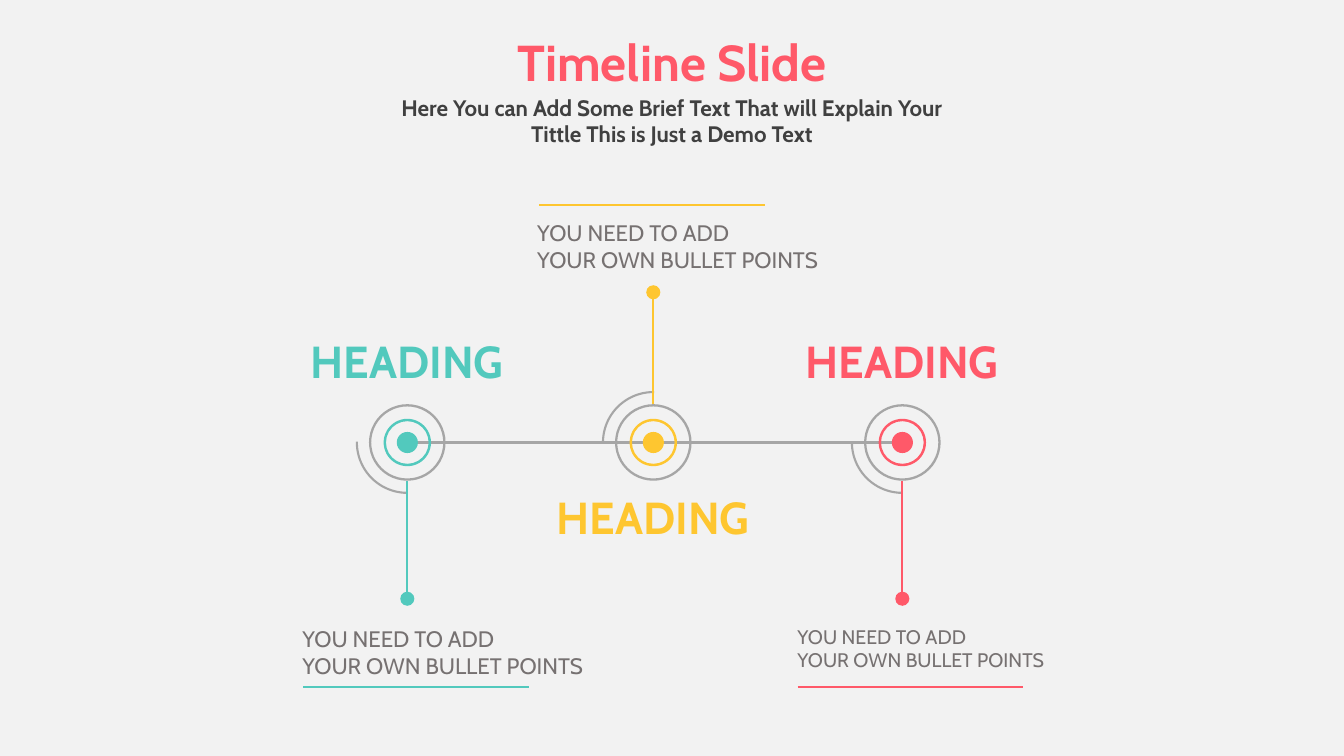
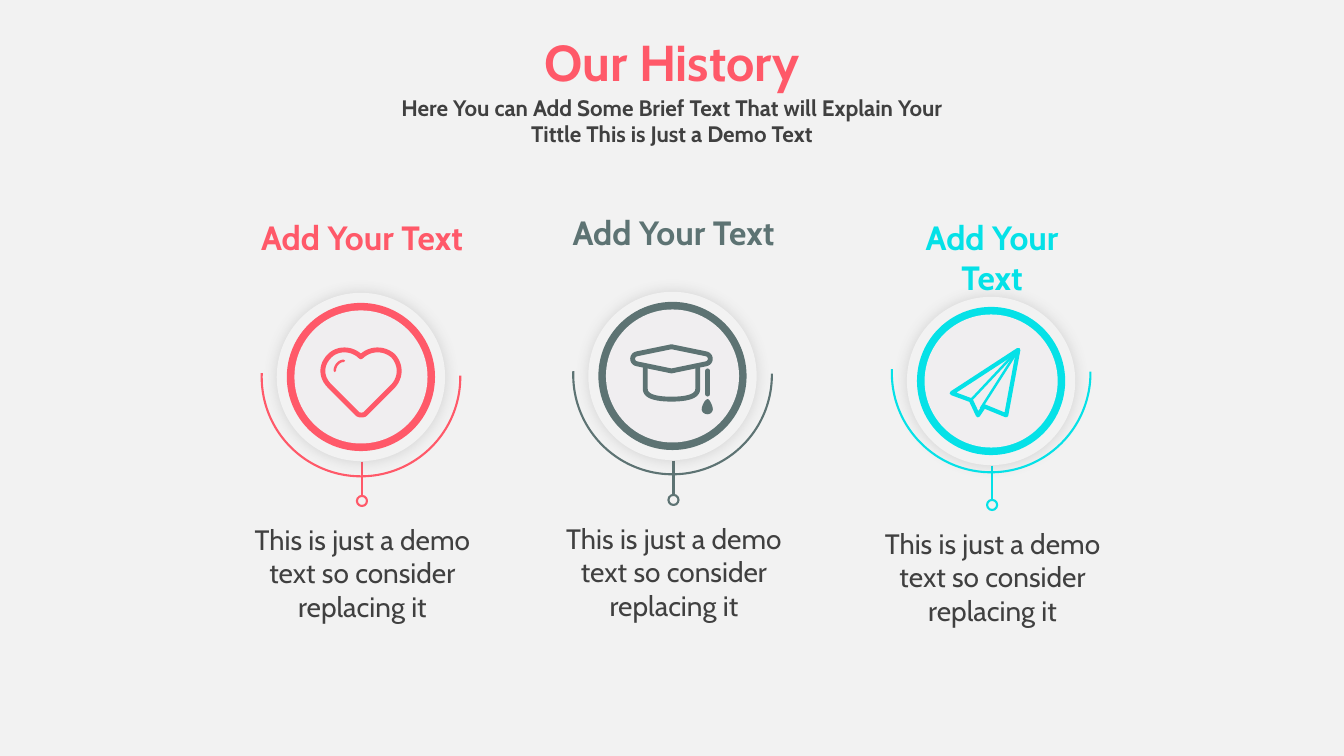
from lxml import etree
from pptx import Presentation, util as u
from pptx.dml.color import RGBColor
from pptx.enum import shapes as es, text as et
from pptx.oxml.ns import qn

PX = 9144  # 100 px to the inch
FONT = "Cabin"
TEAL, GOLD, RED = "52C9BD", "FEC630", "FF5969"
SLATE, CYAN = "5D7373", "05E1E7"
PAPER, PALE, GREY, MUTED, DARK = "F2F2F2", "F0EEF0", "A6A6A6", "767171", "404040"
KIND = es.MSO_SHAPE
LEFT, MID = et.PP_ALIGN.LEFT, et.PP_ALIGN.CENTER

# Content
BRIEF = "Here You can Add Some Brief Text That will Explain Your Tittle This is Just a Demo Text"
NOTE = "YOU NEED TO ADD\nYOUR OWN BULLET POINTS"
DEMO = "This is just a demo text so consider replacing it"

AXIS = 439
STOPS = [
    dict(x=404, color=TEAL, up=False, head=326, note=(290, 615), size=16, rule=(301, 682)),
    dict(x=648, color=GOLD, up=True, head=481, note=(523, 213), size=16, rule=(535, 203)),
    dict(x=895, color=RED, up=False, head=326, note=(781, 615), size=14, rule=(791, 682)),
]

# Icon strokes: (width in pt, closed, start, steps); a step is a line end or a curve
HEART = [
    (3.5, True, (358, 354), [
        (367, 345, 381, 345, 390, 353), (398, 362, 398, 374, 390, 383), (362, 411),
        (360, 412, 357, 412, 355, 411), (327, 383), (318, 374, 318, 362, 327, 353),
        (335, 345, 349, 345, 358, 354)]),
    (1.75, False, (332, 368), [(332, 363, 336, 358, 341, 358)]),
]
CAP = [
    (3.5, True, (666, 344), [
        (700, 351), (706, 352, 706, 360, 700, 361), (666, 368), (632, 361),
        (626, 360, 626, 352, 632, 351)]),
    (3.5, False, (640, 365), [
        (640, 386), (640, 393, 650, 396, 666, 396), (682, 396, 692, 393, 692, 386), (692, 365)]),
    (3.5, False, (702, 368), [(702, 391)]),
    (0, True, (702, 396), [
        (699, 396, 696, 403, 696, 406), (696, 409, 699, 411, 702, 411),
        (704, 411, 707, 409, 707, 406), (707, 403, 704, 396, 702, 396)]),
]
PLANE = [
    (3, True, (1010, 347), [(944, 390), (963, 397), (970, 412), (976, 403), (998, 412)]),
    (1.75, False, (1010, 347), [(963, 397)]),
    (1.75, False, (1010, 347), [(973, 405)]),
]
ITEMS = [
    dict(x=358, y=374, arc=374, color=RED, label=210, wide=257, icon=HEART),
    dict(x=667, y=373, arc=372, color=SLATE, label=205, wide=233, icon=CAP),
    dict(x=983, y=378, arc=370, color=CYAN, label=210, wide=217, icon=PLANE),
]


# Shared helpers
def px(*vals):
    return [round(v * PX) for v in vals]


def rgb(code):
    return RGBColor.from_string(code)


def stroke(line, color, width=1.5):
    line.color.rgb = rgb(color)
    line.width = u.Pt(width)


def write(shape, words, size, color, bold=False, align=MID):
    frame = shape.text_frame
    frame.text = words
    frame.word_wrap = True
    frame.auto_size = et.MSO_AUTO_SIZE.NONE
    frame.vertical_anchor = et.MSO_ANCHOR.TOP
    for para in frame.paragraphs:
        para.alignment = align
        para.space_before = u.Pt(0)
        for run in para.runs:
            font = run.font
            font.name, font.size, font.bold = FONT, u.Pt(size), bold
            font.color.rgb = rgb(color)


def label(slide, box, *style, **more):
    write(slide.shapes.add_textbox(*px(*box)), *style, **more)


def rule(slide, x1, y1, x2, y2, color):
    line = slide.shapes.add_connector(es.MSO_CONNECTOR.STRAIGHT, *px(x1, y1, x2, y2))
    stroke(line.line, color)
    etree.SubElement(line._element.spPr, qn("a:effectLst"))


def round_at(slide, kind, x, y, size, fill=None, line=None, adj=(), turn=0):
    """Add a round shape by its centre and size."""
    shape = slide.shapes.add_shape(kind, *px(x - size / 2, y - size / 2, size, size))
    shape.shadow.inherit = False
    shape.rotation = turn
    for i, val in enumerate(adj):
        shape.adjustments[i] = val
    if fill:
        shape.fill.solid()
        shape.fill.fore_color.rgb = rgb(fill)
    else:
        shape.fill.background()
    if line:
        stroke(shape.line, line)
    else:
        shape.line.fill.background()
    return shape


def glow(shape):
    """Add a soft grey halo."""
    cast = etree.SubElement(shape._element.spPr.find(qn("a:effectLst")), qn("a:outerShdw"),
                            blurRad=str(u.Pt(10)), dist="0", dir="0", algn="ctr")
    tint = etree.SubElement(cast, qn("a:srgbClr"), val="595959")
    etree.SubElement(tint, qn("a:alpha"), val="20000")


def trace(start, steps, parts=12):
    """Turn lines and cubic curves into points."""
    pts = [start]
    for step in steps:
        if len(step) == 2:
            pts.append(step)
            continue
        knots = [pts[-1], step[:2], step[2:4], step[4:]]
        for i in range(1, parts + 1):
            t = i / parts
            mix = ((1 - t) ** 3, 3 * t * (1 - t) ** 2, 3 * t * t * (1 - t), t ** 3)
            pts.append(tuple(sum(m * k[a] for m, k in zip(mix, knots)) for a in (0, 1)))
    return pts


def draw(slide, icon, color):
    for width, closed, start, steps in icon:
        pts = [px(*p) for p in trace(start, steps)]
        pen = slide.shapes.build_freeform(*pts[0], scale=1.0)
        pen.add_line_segments(pts[1:], close=closed)
        shape = pen.convert_to_shape()
        shape.shadow.inherit = False
        if width:
            shape.fill.background()
            stroke(shape.line, color, width)
            edge = shape.line._get_or_add_ln()
            edge.set("cap", "rnd")
            etree.SubElement(edge, qn("a:round"))
        else:
            shape.fill.solid()
            shape.fill.fore_color.rgb = rgb(color)
            shape.line.fill.background()


def new_slide(deck, title):
    slide = deck.slides.add_slide(deck.slide_layouts[0])
    head, brief = slide.placeholders
    for shape, box in ((head, (402, 26, 529, 70)), (brief, (366, 88, 601, 63))):
        shape.left, shape.top, shape.width, shape.height = px(*box)
    write(head, title, 36, RED, True)
    write(brief, BRIEF, 16, DARK, True)
    return slide


# Slides
def timeline(deck):
    slide = new_slide(deck, "Timeline Slide")
    rule(slide, STOPS[0]["x"], AXIS, STOPS[-1]["x"], AXIS, GREY)
    for stop in STOPS:
        x, color, up = stop["x"], stop["color"], stop["up"]
        way = -1 if up else 1
        round_at(slide, KIND.ARC, x, AXIS, 100, line=GREY,
                 adj=(54.2, 108.53), turn=90 if up else 0)
        round_at(slide, KIND.OVAL, x, AXIS, 21, color)
        round_at(slide, KIND.DONUT, x, AXIS, 47, color, adj=(0.05,))
        round_at(slide, KIND.DONUT, x, AXIS, 76, GREY, adj=(0.03,))
        rule(slide, x, AXIS + way * 38, x, AXIS + way * 151, color)
        round_at(slide, KIND.OVAL, x, AXIS + way * 155 + (up and 6), 14, color)
        label(slide, (x - 115, stop["head"], 230, 116), "HEADING", 32, color, True)
        label(slide, (*stop["note"], 350, 63), NOTE, stop["size"], MUTED, align=LEFT)
        left, top = stop["rule"]
        rule(slide, left, top, left + 224, top, color)


def story(deck):
    slide = new_slide(deck, "Our History")
    for item in ITEMS:
        x, y, color, wide = item["x"], item["y"], item["color"], item["wide"]
        stem = x + 1
        rule(slide, stem, y + 84, stem, y + 118, color)
        glow(round_at(slide, KIND.OVAL, x, y, 167, PAPER))
        round_at(slide, KIND.OVAL, x, y, 147, color)
        round_at(slide, KIND.OVAL, x, y, 132, PALE)
        round_at(slide, KIND.ARC, x, item["arc"], 197, line=color,
                 adj=(134.52, 28.37), turn=135)
        round_at(slide, KIND.OVAL, stem, y + 123, 10, line=color)
        label(slide, (stem - wide / 2, item["label"], wide, 90), "Add Your Text", 24, color, True)
        label(slide, (stem - 126, y + 139, 253, 143), DEMO, 20, DARK)
        draw(slide, item["icon"], color)


def main():
    deck = Presentation()
    deck.slide_width, deck.slide_height = u.Inches(13.33), u.Inches(7.5)
    back = deck.slide_master.background.fill
    back.solid()
    back.fore_color.rgb = rgb(PAPER)
    timeline(deck)
    story(deck)
    deck.save("out.pptx")


if __name__ == "__main__":
    main()
